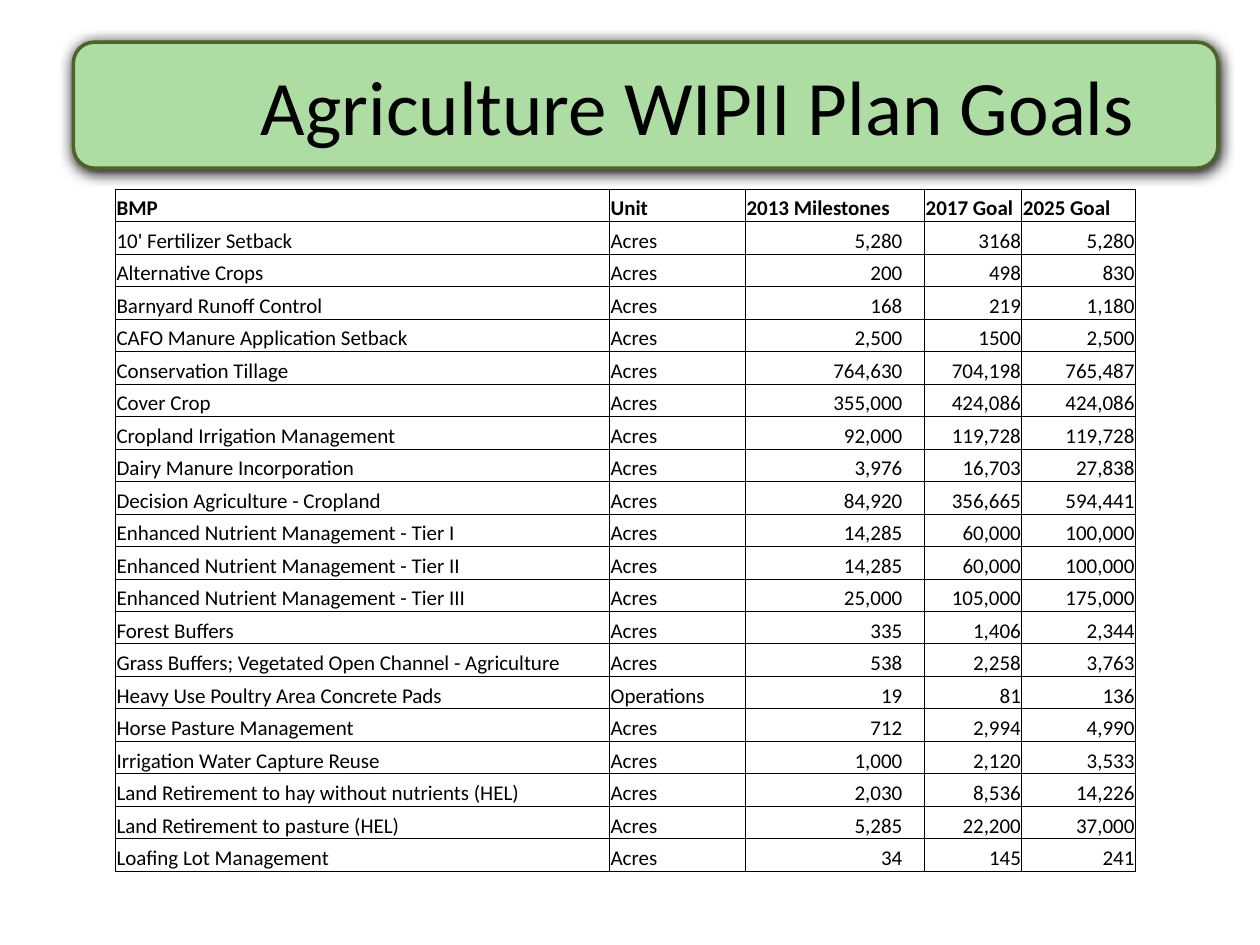
from dataclasses import dataclass
from lxml import etree
from pptx import Presentation
from pptx.dml.color import RGBColor
from pptx.enum.shapes import MSO_SHAPE
from pptx.enum.text import MSO_ANCHOR, PP_ALIGN
from pptx.oxml.ns import qn
from pptx.slide import Slide
from pptx.util import Cm, Pt

ROUNDED = MSO_SHAPE.ROUNDED_RECTANGLE
MIDDLE, BOTTOM = MSO_ANCHOR.MIDDLE, MSO_ANCHOR.BOTTOM
LEFT, CENTER, RIGHT = PP_ALIGN.LEFT, PP_ALIGN.CENTER, PP_ALIGN.RIGHT

COLORS = {"ink": "000000", "paper": "FFFFFF", "banner": "AEDDA3", "edge": "4F6228"}
COLUMN_WIDTHS = [9.96, 2.74, 3.61, 1.96, 2.29]
TABLE_HEIGHT = 13.77
CELL_MARGIN = 0.02
MILESTONE_COLUMN, MILESTONE_MARGIN = 2, 0.45

HEADER = ["BMP", "Unit", "2013 Milestones", "2017 Goal", "2025 Goal"]
GOALS = [
    ["10' Fertilizer Setback", "Acres", "5,280", "3168", "5,280"],
    ["Alternative Crops", "Acres", "200", "498", "830"],
    ["Barnyard Runoff Control", "Acres", "168", "219", "1,180"],
    ["CAFO Manure Application Setback", "Acres", "2,500", "1500", "2,500"],
    ["Conservation Tillage", "Acres", "764,630", "704,198", "765,487"],
    ["Cover Crop", "Acres", "355,000", "424,086", "424,086"],
    ["Cropland Irrigation Management", "Acres", "92,000", "119,728", "119,728"],
    ["Dairy Manure Incorporation", "Acres", "3,976", "16,703", "27,838"],
    ["Decision Agriculture - Cropland", "Acres", "84,920", "356,665", "594,441"],
    ["Enhanced Nutrient Management - Tier I", "Acres", "14,285", "60,000", "100,000"],
    ["Enhanced Nutrient Management - Tier II", "Acres", "14,285", "60,000", "100,000"],
    ["Enhanced Nutrient Management - Tier III", "Acres", "25,000", "105,000", "175,000"],
    ["Forest Buffers", "Acres", "335", "1,406", "2,344"],
    ["Grass Buffers; Vegetated Open Channel - Agriculture", "Acres", "538", "2,258", "3,763"],
    ["Heavy Use Poultry Area Concrete Pads", "Operations", "19", "81", "136"],
    ["Horse Pasture Management", "Acres", "712", "2,994", "4,990"],
    ["Irrigation Water Capture Reuse", "Acres", "1,000", "2,120", "3,533"],
    ["Land Retirement to hay without nutrients (HEL)", "Acres", "2,030", "8,536", "14,226"],
    ["Land Retirement to pasture (HEL)", "Acres", "5,285", "22,200", "37,000"],
    ["Loafing Lot Management", "Acres", "34", "145", "241"],
]


@dataclass
class GoalSlide:
    """Draws the banner, title and goals table in one shared style."""

    page: Slide
    font: str = "Calibri"
    title_size: int = 44
    cell_size: int = 12

    def color(self, name):
        return RGBColor.from_string(COLORS[name])

    def solid(self, parent, name):
        fill = etree.SubElement(parent, qn("a:solidFill"))
        return etree.SubElement(fill, qn("a:srgbClr"), val=COLORS[name])

    def set_text(self, frame, text, size, align, bold=False):
        frame.text = text
        para = frame.paragraphs[0]
        para.alignment = align
        span = para.runs[0]
        span.font.name = self.font
        span.font.size = Pt(size)
        span.font.bold = bold
        span.font.color.rgb = self.color("ink")

    def banner(self, left, top, width, height):
        shape = self.page.shapes.add_shape(ROUNDED, Cm(left), Cm(top), Cm(width), Cm(height))
        shape.fill.solid()
        shape.fill.fore_color.rgb = self.color("banner")
        shape.line.color.rgb = self.color("edge")
        shape.line.width = Pt(2)
        shape.shadow.inherit = False
        effects = shape._element.spPr.find(qn("a:effectLst"))
        shadow = etree.SubElement(effects, qn("a:outerShdw"), blurRad=str(Pt(8.5)),
                                  dist=str(Pt(1)), dir="5400000", rotWithShape="0")
        etree.SubElement(shadow, qn("a:srgbClr"), val=COLORS["ink"])

    def title(self, text, left, top, width, height):
        box = self.page.shapes.add_textbox(Cm(left), Cm(top), Cm(width), Cm(height))
        box.text_frame.word_wrap = True
        box.text_frame.vertical_anchor = MIDDLE
        self.set_text(box.text_frame, text, self.title_size, CENTER)

    def cell(self, cell, text, align, bold, right_margin):
        cell.margin_left = cell.margin_top = Cm(CELL_MARGIN)
        cell.margin_right = Cm(right_margin)
        cell.margin_bottom = 0
        cell.vertical_anchor = BOTTOM
        properties = cell._tc.get_or_add_tcPr()
        for side in ("lnL", "lnR", "lnT", "lnB"):
            self.solid(etree.SubElement(properties, qn(f"a:{side}"), w=str(Pt(0.5))), "ink")
        cell.fill.solid()
        cell.fill.fore_color.rgb = self.color("paper")
        self.set_text(cell.text_frame, text, self.cell_size, align, bold)

    def table(self, rows, left, top):
        frame = self.page.shapes.add_table(
            len(rows), len(COLUMN_WIDTHS), Cm(left), Cm(top),
            Cm(sum(COLUMN_WIDTHS)), Cm(TABLE_HEIGHT))
        table = frame.table
        table.first_row = table.horz_banding = False
        for column, width in zip(table.columns, COLUMN_WIDTHS):
            column.width = Cm(width)
        for row_index, values in enumerate(rows):
            header = row_index == 0
            table.rows[row_index].height = Cm(TABLE_HEIGHT / len(rows))
            for column_index, text in enumerate(values):
                number = not header and column_index >= MILESTONE_COLUMN
                milestone = number and column_index == MILESTONE_COLUMN
                self.cell(table.cell(row_index, column_index), text,
                          RIGHT if number else LEFT, header,
                          MILESTONE_MARGIN if milestone else CELL_MARGIN)


def main():
    deck = Presentation()
    deck.slide_width, deck.slide_height = Cm(25.4), Cm(19.05)
    slide = GoalSlide(deck.slides.add_slide(deck.slide_layouts[6]))
    slide.banner(1.48, 0.85, 23.07, 2.54)
    slide.table([HEADER] + GOALS, 2.33, 3.81)
    slide.title("Agriculture WIPII Plan Goals", 3.6, 0.85, 20.95, 2.54)
    deck.save("out.pptx")


if __name__ == "__main__":
    main()
